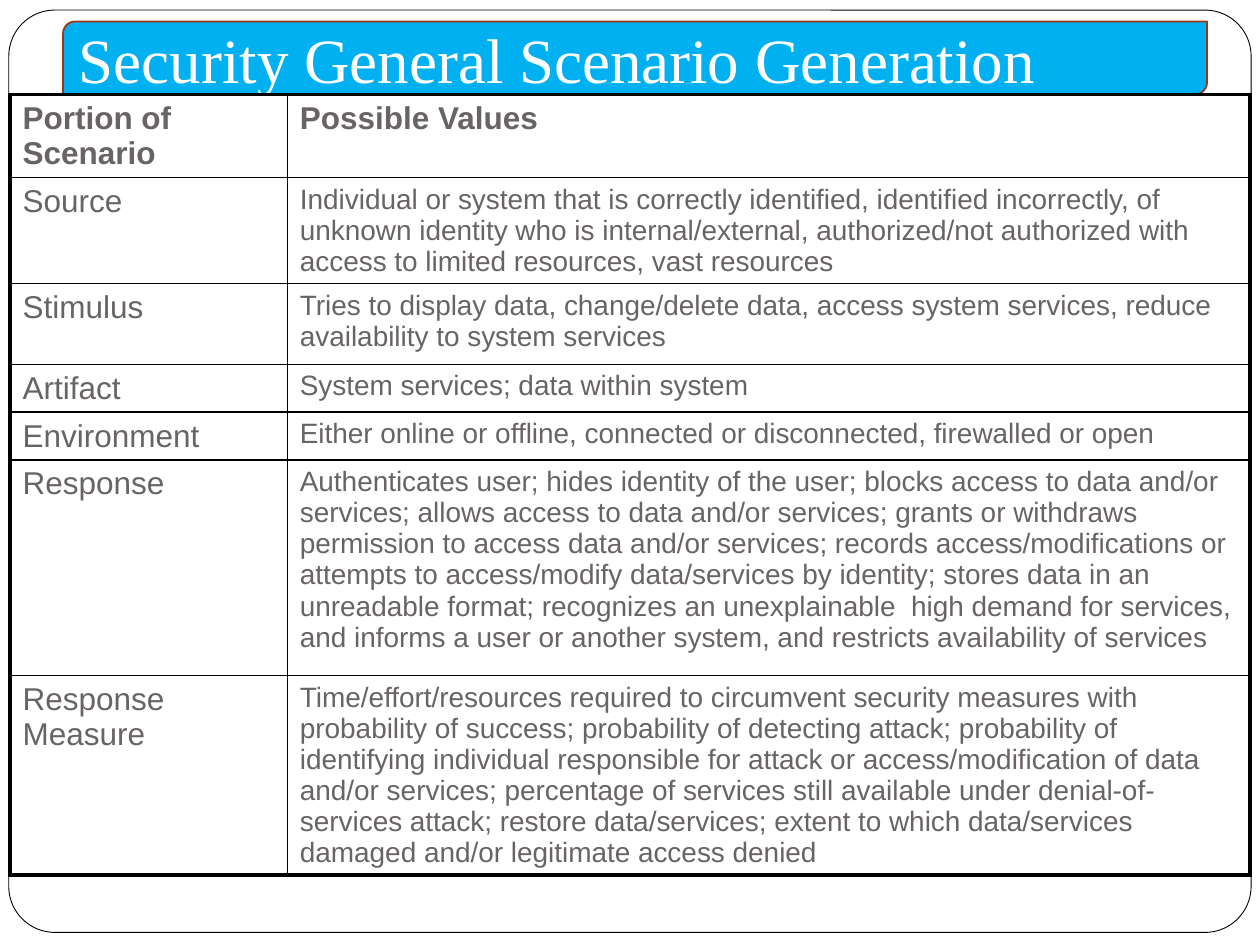
from dataclasses import dataclass
from typing import NamedTuple

from lxml.etree import SubElement
from pptx import Presentation
from pptx.dml.color import RGBColor
from pptx.enum.shapes import MSO_SHAPE
from pptx.enum.text import MSO_ANCHOR, PP_ALIGN
from pptx.oxml import parse_xml
from pptx.oxml.ns import nsdecls, qn
from pptx.util import Inches, Pt


@dataclass(frozen=True)
class Theme:
    white: str = "FFFFFF"
    black: str = "000000"
    blue: str = "00B0F0"
    rust: str = "9C3511"
    grey: str = "696464"
    serif: str = "Times New Roman"
    sans: str = "Arial"
    title: int = 36
    label: int = 18
    body: int = 16
    thin: float = 1
    thick: float = 2.25


class Box(NamedTuple):
    left: float
    top: float
    width: float
    height: float


class Row(NamedTuple):
    label: str
    value: str
    height: float


THEME = Theme()
WIDE, HIGH = 10, 7.5
COLS, ROWS = 100, 75
SPANS = (22, 76.4)

DATA = (
    Row("Portion of Scenario", "Possible Values", 6.6),
    Row("Source", "Individual or system that is correctly identified, identified "
        "incorrectly, of unknown identity who is internal/external, "
        "authorized/not authorized with access to limited resources, "
        "vast resources", 8.4),
    Row("Stimulus", "Tries to display data, change/delete data, access system "
        "services, reduce availability to system services", 6.4),
    Row("Artifact", "System services; data within system", 3.8),
    Row("Environment", "Either online or offline, connected or disconnected, "
        "firewalled or open", 3.8),
    Row("Response", "Authenticates user; hides identity of the user; blocks access "
        "to data and/or services; allows access to data and/or services; grants "
        "or withdraws permission to access data and/or services; records "
        "access/modifications or attempts to access/modify data/services by "
        "identity; stores data in an unreadable format; recognizes an "
        "unexplainable  high demand for services, and informs a user or another "
        "system, and restricts availability of services", 17.1),
    Row("Response Measure", "Time/effort/resources required to circumvent security "
        "measures with probability of success; probability of detecting attack; "
        "probability of identifying individual responsible for attack or "
        "access/modification of data and/or services; percentage of services "
        "still available under denial-of-services attack; restore data/services; "
        "extent to which data/services damaged and/or legitimate access denied",
        15.8),
)


def across(cols: float) -> int:
    return Inches(WIDE * cols / COLS)


def down(rows: float) -> int:
    return Inches(HIGH * rows / ROWS)


def place(box: Box) -> tuple:
    return across(box.left), down(box.top), across(box.width), down(box.height)


def tint(code: str) -> RGBColor:
    return RGBColor.from_string(code)


def write(frame, text: str, *, font: str, size: float, color: str,
          bold: bool = False) -> None:
    frame.word_wrap = True
    para = frame.paragraphs[0]
    para.alignment = PP_ALIGN.LEFT
    run = para.add_run()
    run.text = text
    run.font.name = font
    run.font.size = Pt(size)
    run.font.bold = bold
    run.font.color.rgb = tint(color)


def panel(slide, kind: MSO_SHAPE, box: Box, fill: str, line: str, width: float):
    shape = slide.shapes.add_shape(kind, *place(box))
    shape.shadow.inherit = False
    shape.fill.solid()
    shape.fill.fore_color.rgb = tint(fill)
    shape.line.color.rgb = tint(line)
    shape.line.width = Pt(width)
    return shape


def border(cell, sides: dict[str, float]) -> None:
    props = cell._tc.get_or_add_tcPr()
    for spot, (side, width) in enumerate(sides.items()):
        line = parse_xml(f'<a:ln{side} {nsdecls("a")} w="{Pt(width)}"/>')
        fill = SubElement(line, qn("a:solidFill"))
        SubElement(fill, qn("a:srgbClr"), val=THEME.black)
        props.insert(spot, line)


def grid(slide, rows: tuple[Row, ...], left: float, top: float) -> None:
    box = Box(left, top, sum(SPANS), sum(row.height for row in rows))
    table = slide.shapes.add_table(len(rows), len(SPANS), *place(box)).table
    table.horz_banding = False
    table.first_row = False
    for col, span in zip(table.columns, SPANS):
        col.width = across(span)
    for y, row in enumerate(rows):
        table.rows[y].height = down(row.height)
        for x, text in enumerate((row.label, row.value)):
            cell = table.cell(y, x)
            cell.fill.background()
            head = y == 0
            write(cell.text_frame, text, font=THEME.sans, color=THEME.grey,
                  size=THEME.label if head or x == 0 else THEME.body, bold=head)
            edges = {"L": x == 0, "R": x == len(SPANS) - 1,
                     "T": head, "B": y == len(rows) - 1}
            border(cell, {side: THEME.thick if edge else THEME.thin
                          for side, edge in edges.items()})


def main() -> None:
    deck = Presentation()
    deck.slide_width, deck.slide_height = Inches(WIDE), Inches(HIGH)
    slide = deck.slides.add_slide(deck.slide_layouts[6])
    frame = panel(slide, MSO_SHAPE.ROUNDED_RECTANGLE, Box(0.7, 0.8, 98.6, 73.2),
                  THEME.white, THEME.black, 0.5)
    frame.adjustments[0] = 0.05
    title = panel(slide, MSO_SHAPE.ROUND_2_DIAG_RECTANGLE,
                  Box(5, 1.7, 90.8, 5.8), THEME.blue, THEME.rust, THEME.thin)
    title.text_frame.vertical_anchor = MSO_ANCHOR.MIDDLE
    write(title.text_frame, "Security General Scenario Generation",
          font=THEME.serif, size=THEME.title, color=THEME.white)
    grid(slide, DATA, 0.8, 7.5)
    deck.save("out.pptx")


if __name__ == "__main__":
    main()
